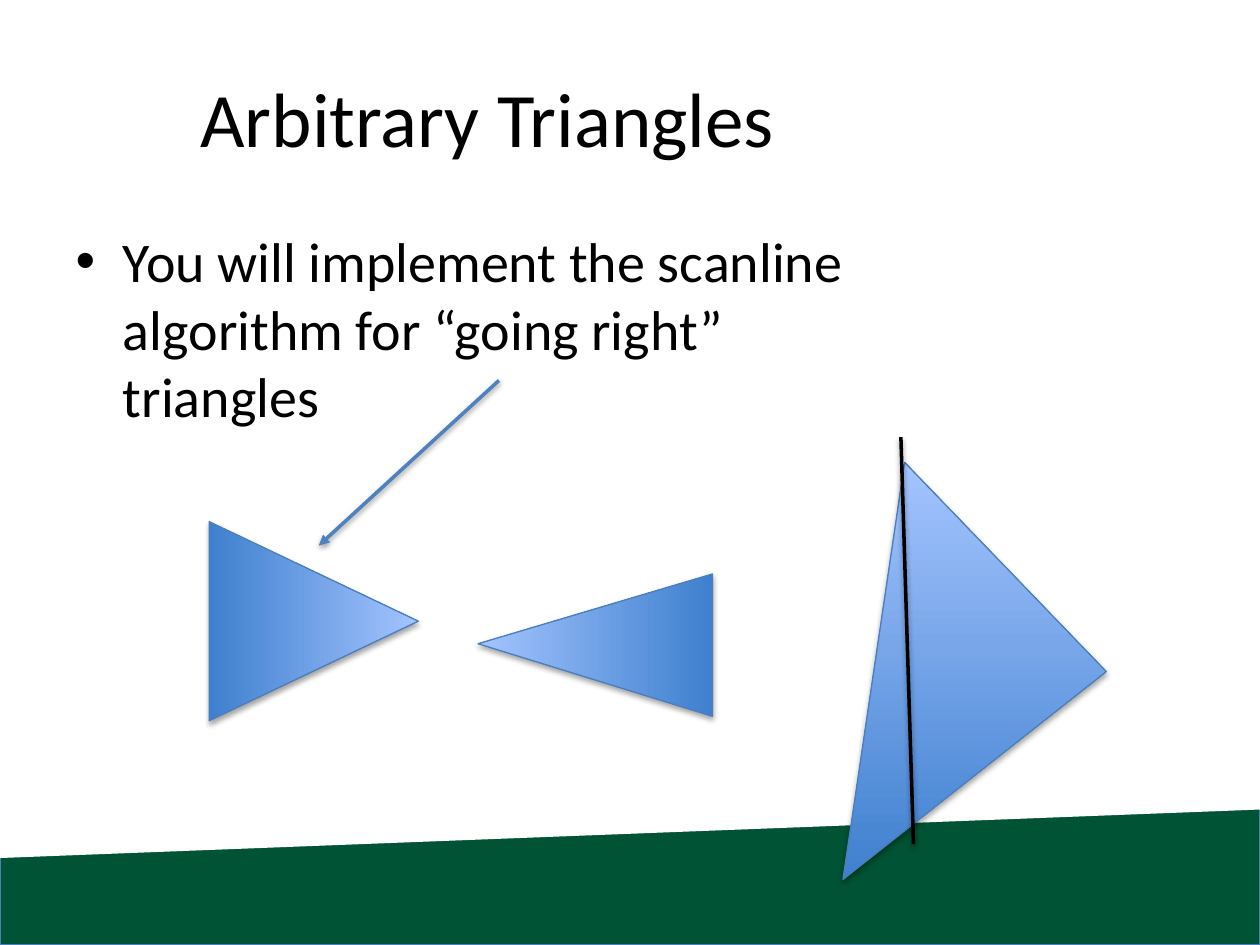
from lxml import etree
from pptx import Presentation
from pptx.dml.color import RGBColor
from pptx.enum import shapes, text
from pptx.oxml import parse_xml
from pptx.oxml.ns import nsdecls, qn
from pptx.util import Inches, Pt

BLACK = RGBColor(0x00, 0x00, 0x00)
WHITE = RGBColor(0xFF, 0xFF, 0xFF)
GREEN = RGBColor(0x00, 0x53, 0x34)
EDGE = RGBColor(0x4B, 0x7E, 0xBC)
ARROW = RGBColor(0x4F, 0x81, 0xBD)
DARK = RGBColor(0x3F, 0x80, 0xCE)
LIGHT = RGBColor(0xA4, 0xC4, 0xFF)
FONT = "Calibri"
KIND = shapes.MSO_SHAPE


def shade(item, dist=1.8, alpha=35):
    """Give a shape or line a soft shadow straight below it."""
    props = item.element.spPr
    for old in props.findall(qn("a:effectLst")):
        props.remove(old)
    props.append(parse_xml(
        f'<a:effectLst {nsdecls("a")}><a:outerShdw blurRad="{Pt(3.15)}" '
        f'dist="{Pt(dist)}" dir="5400000" rotWithShape="0">'
        f'<a:srgbClr val="000000"><a:alpha val="{alpha * 1000}"/></a:srgbClr>'
        '</a:outerShdw></a:effectLst>'))


def outline(shape):
    shape.line.color.rgb = EDGE
    shape.line.width = Pt(0.75)
    shade(shape)


def blend(shape):
    """Fill from dark at the base to light at the top, with edge and shadow."""
    shape.fill.gradient()
    shape.fill.gradient_angle = 90
    for stop, color in zip(shape.fill.gradient_stops, (DARK, LIGHT)):
        stop.color.rgb = color
    outline(shape)


def add_band(slide, left, top, width, height):
    """Green footer whose top edge is cut on a slant by a white shape."""
    band = slide.shapes.add_shape(
        KIND.RECTANGLE, Inches(left), Inches(top), Inches(width), Inches(height))
    band.fill.solid()
    band.fill.fore_color.rgb = GREEN
    outline(band)

    depth = 2.32
    cut = slide.shapes.add_shape(
        KIND.PARALLELOGRAM, Inches(left + (width - depth) / 2),
        Inches(top + 0.04 - width / 2), Inches(depth), Inches(width))
    cut.adjustments[0] = 0.166
    cut.rotation = 90
    cut.element.spPr.xfrm.set("flipH", "1")
    cut.fill.solid()
    cut.fill.fore_color.rgb = WHITE
    cut.line.fill.background()
    cut.shadow.inherit = False

    tree = slide.shapes.element
    for place, shape in enumerate((band, cut), 2):
        tree.insert(place, shape.element)


def add_text(holder, words, size, left, top, width, height):
    holder.left, holder.top = Inches(left), Inches(top)
    holder.width, holder.height = Inches(width), Inches(height)
    holder.text_frame.text = words
    para = holder.text_frame.paragraphs[0]
    para.font.name = FONT
    para.font.size = Pt(size)
    para.font.color.rgb = BLACK
    return para


def add_wedge(slide, left, top, width, height, turn, tip=0.5):
    """Triangle turned to point right (90) or left (270)."""
    wedge = slide.shapes.add_shape(
        KIND.ISOSCELES_TRIANGLE, Inches(left), Inches(top),
        Inches(width), Inches(height))
    wedge.adjustments[0] = tip
    wedge.rotation = turn
    blend(wedge)


def add_line(slide, start, end, color, head=False):
    line = slide.shapes.add_connector(
        shapes.MSO_CONNECTOR.STRAIGHT, *map(Inches, start + end))
    line.line.color.rgb = color
    line.line.width = Pt(2)
    if head:
        etree.SubElement(line.line._get_or_add_ln(), qn("a:tailEnd"), type="triangle")
    shade(line, 1.6, 38)


def add_split(slide, left, top, width, height):
    """Arbitrary triangle with a line dividing it in two."""
    apex = left + 0.49
    points = [(left + width, top + 1.66), (left, top + height)]
    build = slide.shapes.build_freeform(Inches(apex), Inches(top))
    build.add_line_segments([(Inches(x), Inches(y)) for x, y in points], close=True)
    blend(build.convert_to_shape())
    add_line(slide, (left + 0.56, top + 3.03), (left + 0.46, top - 0.2), BLACK)


def main():
    deck = Presentation()
    deck.slide_width, deck.slide_height = Inches(10), Inches(7.5)
    slide = deck.slides.add_slide(deck.slide_layouts[1])
    add_band(slide, 0, 5.61, 10, 1.89)
    title = add_text(slide.shapes.title, "Arbitrary Triangles", 44,
                     0.5, 0.3, 6.74, 1.25)
    title.alignment = text.PP_ALIGN.CENTER
    add_text(slide.placeholders[1],
             "You will implement the scanline algorithm for “going right” triangles",
             32, 0.5, 1.75, 6.74, 4.95)
    add_wedge(slide, 1.7, 4.1, 1.58, 1.66, 90)
    add_wedge(slide, 4.16, 4.19, 1.13, 1.86, 270, 0.51)
    add_split(slide, 6.69, 3.67, 2.09, 3.31)
    add_line(slide, (3.96, 3.02), (2.53, 4.33), ARROW, head=True)
    deck.save("out.pptx")


if __name__ == "__main__":
    main()
